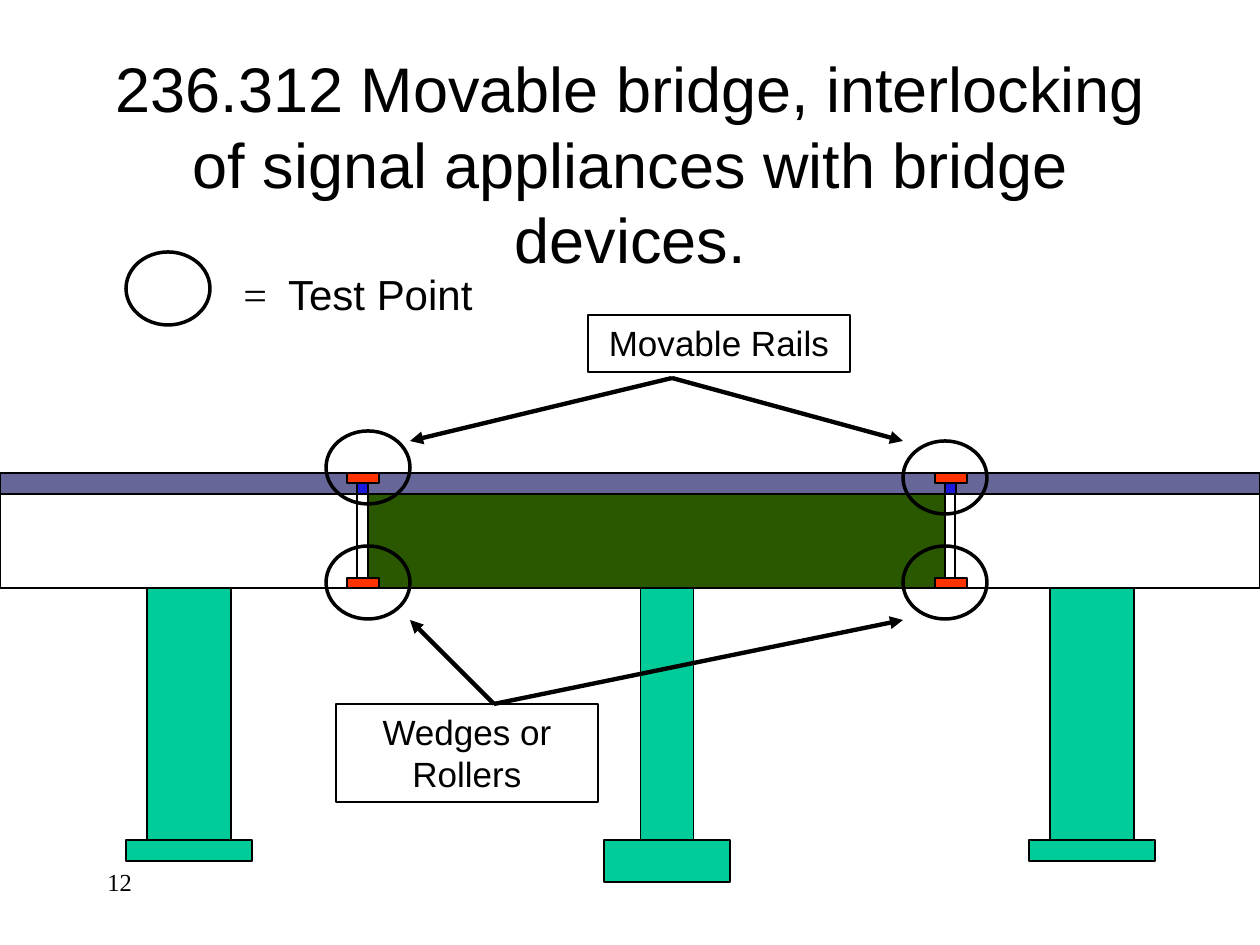
from lxml import etree
from pptx import Presentation, util as u
from pptx.dml.color import RGBColor
from pptx.enum import shapes, text
from pptx.oxml.ns import qn

PX = 914400 / 126
COLORS = {
    "ink": "000000",
    "pier": "00CC99",
    "span": "2A5800",
    "approach": "FFFFFF",
    "track": "666699",
    "joint": "1A1ADE",
    "wedge": "FF3300",
}
RECTANGLE = shapes.MSO_SHAPE.RECTANGLE
OVAL = shapes.MSO_SHAPE.OVAL

presentation = Presentation()
presentation.slide_width = round(1260 * PX)
presentation.slide_height = round(945 * PX)
slide = presentation.slides.add_slide(presentation.slide_layouts[6])


def add_outlined(kind, box, fill=None, width=1):
    shape = slide.shapes.add_shape(kind, *[round(length * PX) for length in box])
    shape.shadow.inherit = False
    if fill:
        shape.fill.solid()
        shape.fill.fore_color.rgb = RGBColor.from_string(COLORS[fill])
    else:
        shape.fill.background()
    shape.line.color.rgb = RGBColor.from_string(COLORS["ink"])
    shape.line.width = u.Pt(width)
    return shape


def write_text(words, box=None, shape=None, size=20, font="Arial", align="LEFT", anchor="TOP", lead=None):
    if shape is None:
        shape = slide.shapes.add_textbox(*[round(length * PX) for length in box])
    frame = shape.text_frame
    frame.word_wrap = True
    frame.vertical_anchor = getattr(text.MSO_ANCHOR, anchor)
    paragraph = frame.paragraphs[0]
    paragraph.alignment = getattr(text.PP_ALIGN, align)
    paragraph.line_spacing = u.Pt(size * 1.2)
    parts = [(words, font)]
    if lead:
        parts.insert(0, (lead, "Times New Roman"))
    for part, face in parts:
        run = paragraph.add_run()
        run.text = part
        run.font.size = u.Pt(size)
        run.font.name = face
        run.font.color.rgb = RGBColor.from_string(COLORS["ink"])


write_text("236.312 Movable bridge, interlocking of signal appliances with bridge devices.",
           box=(95, 84, 1071, 158), size=36, align="CENTER", anchor="MIDDLE")
write_text("12", box=(95, 861, 262, 63), size=14, font="Times New Roman")

for center, pier_width, footing_height in [(189, 84, 21), (1092, 84, 21), (667, 53, 42)]:
    add_outlined(RECTANGLE, (center - pier_width / 2, 588, pier_width, 252), "pier")
    add_outlined(RECTANGLE, (center - 63, 840, 126, footing_height), "pier")

for left, width, fill in [(368, 577, "span"), (955, 305, "approach"), (0, 357, "approach")]:
    add_outlined(RECTANGLE, (left, 494, width, 94), fill)
add_outlined(RECTANGLE, (0, 473, 1260, 21), "track")

for joint_left, wedge_left in [(357, 347), (945, 935)]:
    add_outlined(RECTANGLE, (joint_left, 473, 11, 21), "joint")
    for top in (473, 578):
        add_outlined(RECTANGLE, (wedge_left, top, 32, 10), "wedge")

for left, top in [(326, 431), (903, 441), (326, 546), (903, 546), (126, 252)]:
    add_outlined(OVAL, (left, top, 84, 73), width=2)

callouts = [
    ("Wedges or Rollers", (336, 704, 262, 98), (494, 704), 620),
    ("Movable Rails", (588, 315, 262, 57), (672, 378), 441),
]
for label, box, start, end_y in callouts:
    write_text(label, shape=add_outlined(RECTANGLE, box), align="CENTER")
    for end_x in (410, 903):
        points = [round(length * PX) for length in (*start, end_x, end_y)]
        arrow = slide.shapes.add_connector(shapes.MSO_CONNECTOR.STRAIGHT, *points)
        arrow.line.color.rgb = RGBColor.from_string(COLORS["ink"])
        arrow.line.width = u.Pt(2.5)
        etree.SubElement(arrow.line._get_or_add_ln(), qn("a:tailEnd"), type="triangle")
        etree.SubElement(arrow._element.spPr, qn("a:effectLst"))

write_text("Test Point", box=(231, 262, 368, 63), size=24, lead="=  ")

presentation.save("out.pptx")
